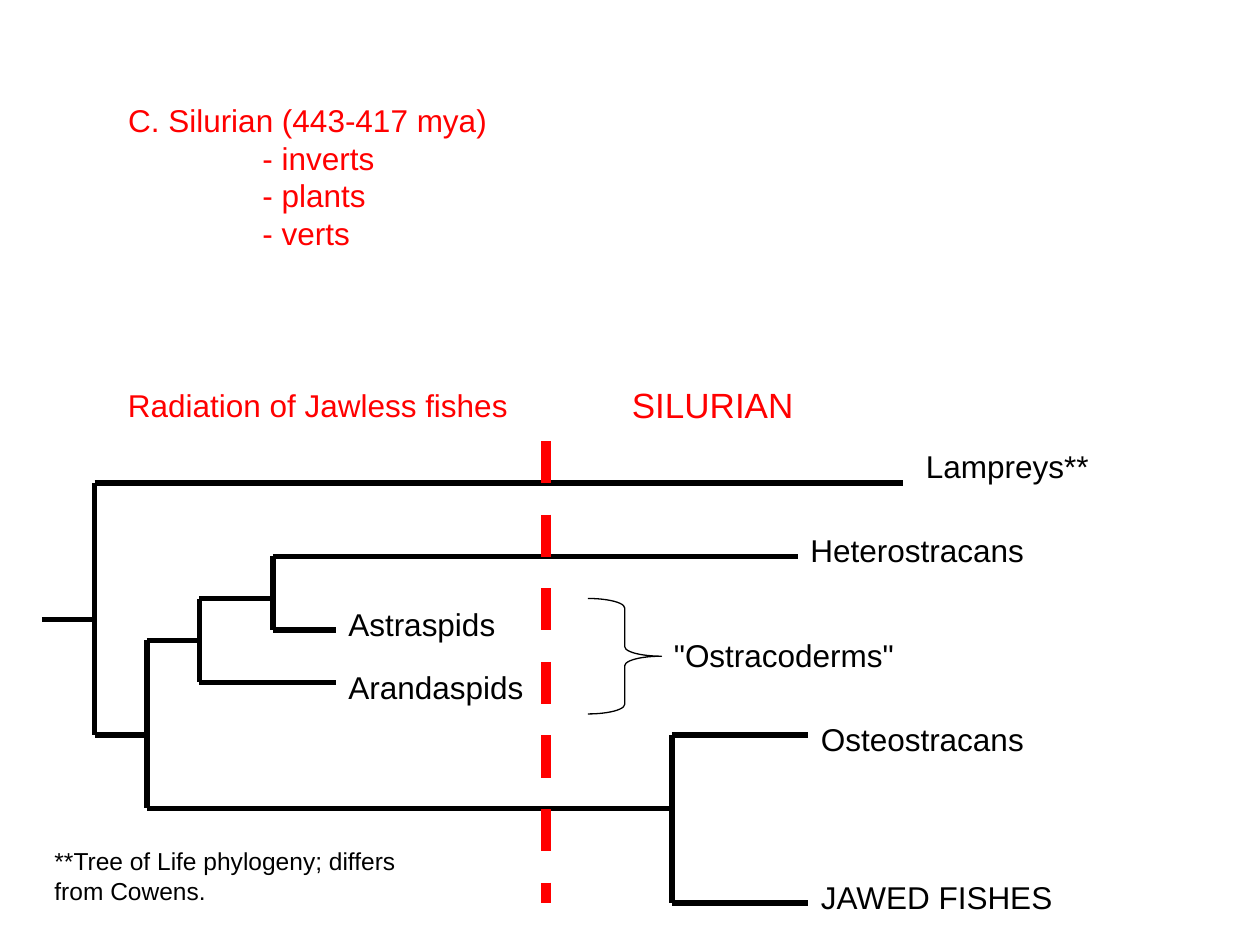
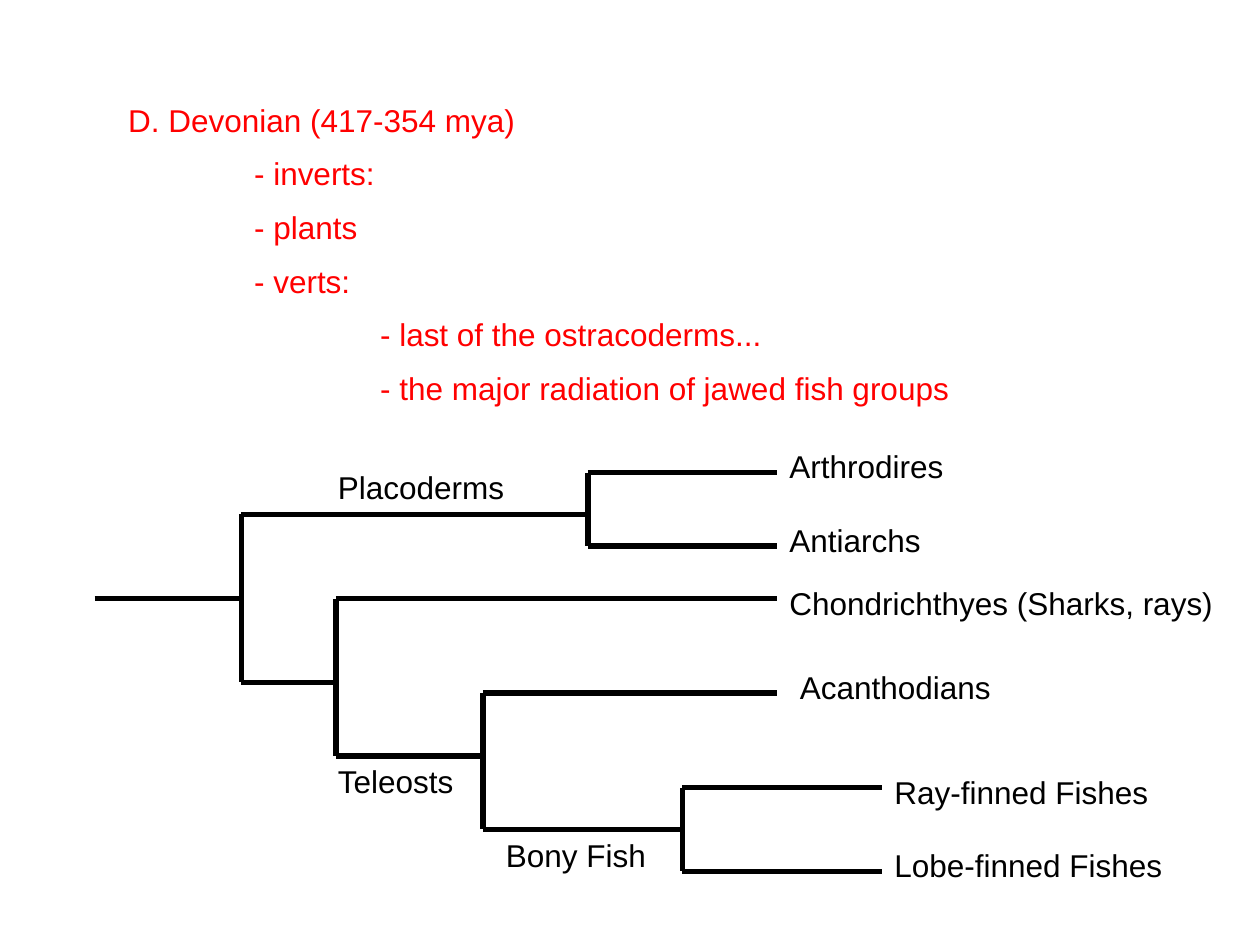
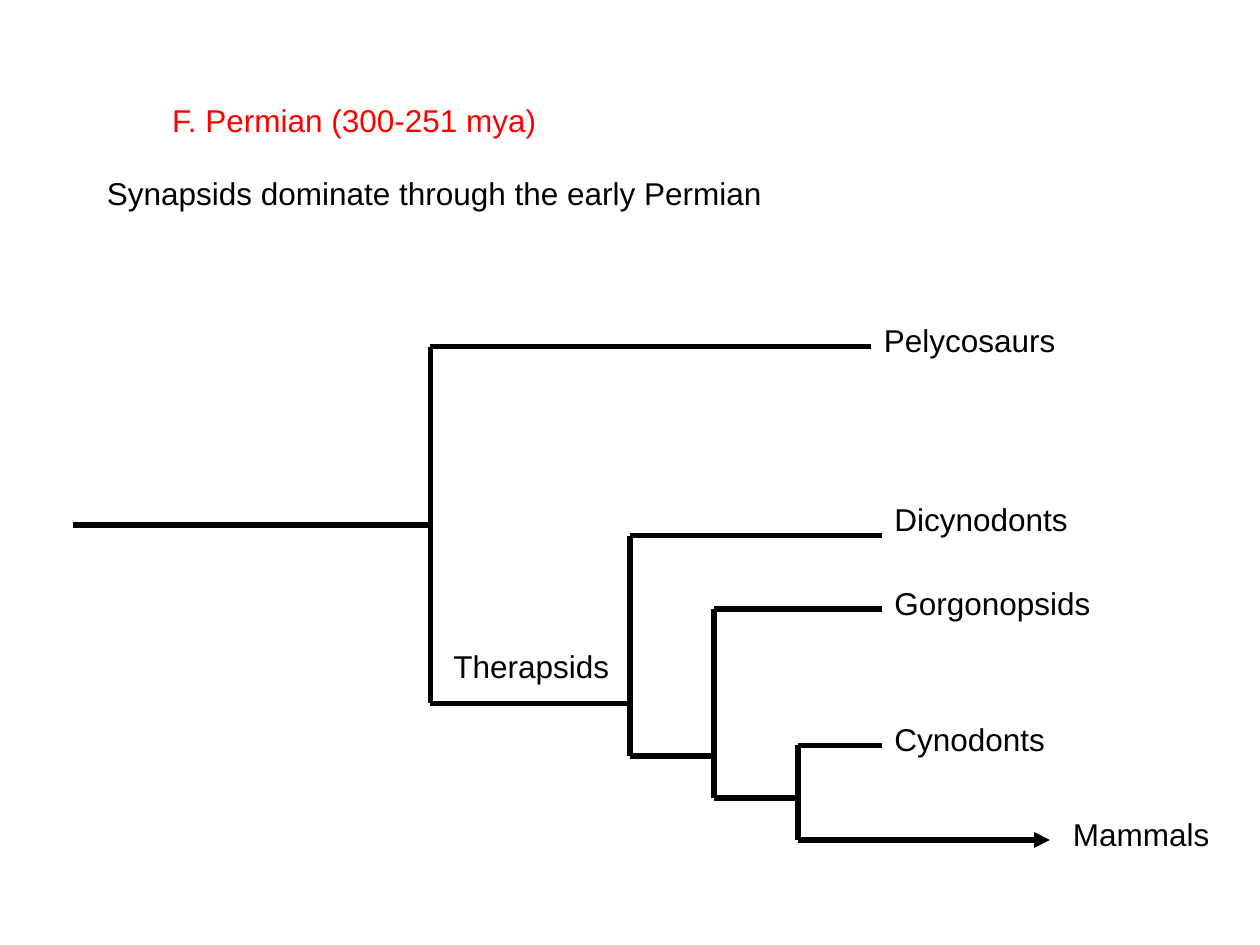
"""Build three slides on fish and synapsid evolution with branching trees."""
from lxml import etree
from pptx import Presentation
from pptx.dml.color import RGBColor
from pptx.enum.dml import MSO_LINE
from pptx.enum.shapes import MSO_CONNECTOR, MSO_SHAPE
from pptx.enum.text import MSO_ANCHOR, MSO_AUTO_SIZE, PP_ALIGN
from pptx.oxml.ns import qn
from pptx.util import Pt

PX = 7620
STRAIGHT = MSO_CONNECTOR.STRAIGHT
RIGHT_BRACE = MSO_SHAPE.RIGHT_BRACE
DASH = MSO_LINE.DASH

COLORS = {"period": "FF0000", "ink": "000000"}
FRAME_FORMAT = {
    "word_wrap": True,
    "auto_size": MSO_AUTO_SIZE.NONE,
    "vertical_anchor": MSO_ANCHOR.TOP,
    "margin_left": 12 * PX,
    "margin_right": 12 * PX,
    "margin_top": 6 * PX,
    "margin_bottom": 6 * PX,
}
FONT_FORMAT = {"name": "Arial", "bold": False}
TITLE_TOP = 90
LINE_HEIGHT = 48
TITLE_ONLY, TITLE_AND_LIST = 5, 1


def rgb(role):
    """Return the colour of a role."""
    return RGBColor.from_string(COLORS[role])


def set_all(target, values):
    """Set every attribute in a dict of format values."""
    for attribute, value in values.items():
        setattr(target, attribute, value)


def place(shape, left, top, width, height):
    """Move and size a shape in px."""
    set_all(shape, {"left": left * PX, "top": top * PX,
                    "width": width * PX, "height": height * PX})


def write(paragraph, text, role, size=18, gap=0):
    """Write one formatted, left-aligned run into a paragraph."""
    set_all(paragraph, {"alignment": PP_ALIGN.LEFT, "space_before": Pt(gap)})
    run = paragraph.add_run()
    run.text = text
    set_all(run.font, {**FONT_FORMAT, "size": Pt(size)})
    run.font.color.rgb = rgb(role)


def add_period(deck, layout, heading, left=110):
    """Add a slide headed by the name of a geological period."""
    slide = deck.slides.add_slide(deck.slide_layouts[layout])
    place(slide.shapes.title, left, TITLE_TOP, 970, LINE_HEIGHT)
    frame = slide.shapes.title.text_frame
    set_all(frame, FRAME_FORMAT)
    write(frame.paragraphs[0], heading, "period")
    return slide


def add_topics(slide, top, height, topics, gap=0):
    """Fill the body placeholder with (indent, text) topics."""
    body = slide.placeholders[1]
    place(body, 110, top, 1060, height)
    frame = body.text_frame
    set_all(frame, FRAME_FORMAT)
    for index, (indent, topic) in enumerate(topics):
        paragraph = frame.add_paragraph() if index else frame.paragraphs[0]
        write(paragraph, topic, "period", gap=gap if index else 0)
        properties = paragraph._p.get_or_add_pPr()
        properties.set("marL", str(indent * PX))
        properties.set("indent", "0")
        etree.SubElement(properties, qn("a:buNone"))


def add_label(slide, text, left, top, width, height=LINE_HEIGHT, role="ink", size=18):
    """Add a text label."""
    label = slide.shapes.add_textbox(left * PX, top * PX, width * PX, height * PX)
    set_all(label.text_frame, FRAME_FORMAT)
    write(label.text_frame.paragraphs[0], text, role, size)


def add_branch(slide, x1, y1, x2, y2, role="ink", weight=3):
    """Add a straight line without shadow and return it."""
    branch = slide.shapes.add_connector(STRAIGHT, x1 * PX, y1 * PX, x2 * PX, y2 * PX)
    branch.line.color.rgb = rgb(role)
    branch.line.width = Pt(weight)
    etree.SubElement(branch._element.spPr, qn("a:effectLst"))
    return branch


def add_tree(slide, root, forks):
    """Draw a root (x1, x2, y) and forks (x, upper y, upper end, lower y, lower end)."""
    start, end, level = root
    add_branch(slide, start, level, end, level)
    for x, upper, upper_end, lower, lower_end in forks:
        add_branch(slide, x, upper, x, lower)
        add_branch(slide, x, upper, upper_end, upper)
        add_branch(slide, x, lower, lower_end, lower)


def add_labels(slide, labels):
    """Add all (text, left, top, width) labels of a tree."""
    for label in labels:
        add_label(slide, *label)


def add_brace(slide, left, top, width, height):
    """Add a thin right brace that groups taxa."""
    brace = slide.shapes.add_shape(RIGHT_BRACE, left * PX, top * PX, width * PX, height * PX)
    brace.adjustments[0] = 0.13
    brace.shadow.inherit = False
    brace.fill.background()
    brace.line.color.rgb = rgb("ink")
    brace.line.width = Pt(0.75)


def build_silurian(deck):
    """Build the slide on jawless fishes."""
    slide = add_period(deck, TITLE_AND_LIST, "C. Silurian (443-417 mya)")
    add_topics(slide, 126, 130, [(128, "- inverts"), (128, "- plants"), (128, "- verts")])
    add_label(slide, "Radiation of Jawless fishes", 110, 362, 430, role="period")
    add_label(slide, "SILURIAN", 590, 359, 300, role="period", size=20)
    add_tree(slide, (40, 90, 590), [
        (90, 460, 860, 700, 140),
        (140, 610, 190, 770, 640),
        (190, 570, 260, 650, 320),
        (260, 530, 760, 600, 320),
        (640, 700, 770, 860, 770),
    ])
    add_labels(slide, [
        ("Lampreys**", 870, 420, 260),
        ("Heterostracans", 760, 500, 310),
        ("Astraspids", 320, 570, 230),
        ("Arandaspids", 320, 630, 280),
        ('"Ostracoderms"', 630, 600, 300),
        ("Osteostracans", 770, 680, 230),
        ("JAWED FISHES", 770, 830, 310),
    ])
    add_brace(slide, 560, 570, 70, 110)
    boundary = add_branch(slide, 520, 420, 520, 860, "period", 6)
    boundary.line.dash_style = DASH
    add_label(slide, "**Tree of Life phylogeny; differs from Cowens.", 40, 800, 390, 68, size=14)


def build_devonian(deck):
    """Build the slide on jawed fishes."""
    slide = add_period(deck, TITLE_AND_LIST, "D. Devonian (417-354 mya)")
    add_topics(slide, 141, 268, [
        (120, "- inverts:"),
        (120, "- plants"),
        (120, "- verts:"),
        (240, "- last of the ostracoderms..."),
        (240, "- the major radiation of jawed fish groups"),
    ], gap=9)
    add_tree(slide, (90, 230, 570), [
        (230, 490, 560, 650, 320),
        (560, 450, 740, 520, 740),
        (320, 570, 740, 720, 460),
        (460, 660, 740, 790, 650),
        (650, 750, 840, 830, 840),
    ])
    add_labels(slide, [
        ("Placoderms", 310, 440, 290),
        ("Arthrodires", 740, 420, 250),
        ("Antiarchs", 740, 490, 210),
        ("Chondrichthyes (Sharks, rays)", 740, 550, 460),
        ("Acanthodians", 750, 630, 310),
        ("Teleosts", 310, 720, 220),
        ("Bony Fish", 470, 790, 160),
        ("Ray-finned Fishes", 840, 730, 330),
        ("Lobe-finned Fishes", 840, 800, 280),
    ])


def build_permian(deck):
    """Build the slide on synapsids."""
    slide = add_period(deck, TITLE_ONLY, "F. Permian (300-251 mya)", left=152)
    add_label(slide, "Synapsids dominate through the early Permian", 90, 160, 730)
    add_tree(slide, (70, 410, 500), [
        (410, 330, 830, 670, 600),
        (600, 510, 840, 720, 680),
        (680, 580, 840, 760, 760),
        (760, 710, 840, 800, 880),
    ])
    lineage = add_branch(slide, 880, 800, 1000, 800)
    etree.SubElement(lineage.line._get_or_add_ln(), qn("a:tailEnd"), type="triangle")
    add_labels(slide, [
        ("Pelycosaurs", 830, 300, 300),
        ("Dicynodonts", 840, 470, 300),
        ("Gorgonopsids", 840, 550, 240),
        ("Therapsids", 420, 610, 230),
        ("Cynodonts", 840, 680, 210),
        ("Mammals", 1010, 770, 160),
    ])


def main():
    """Build and save the deck."""
    deck = Presentation()
    set_all(deck, {"slide_width": 1200 * PX, "slide_height": 900 * PX})
    for build in (build_silurian, build_devonian, build_permian):
        build(deck)
    deck.save("out.pptx")


if __name__ == "__main__":
    main()
